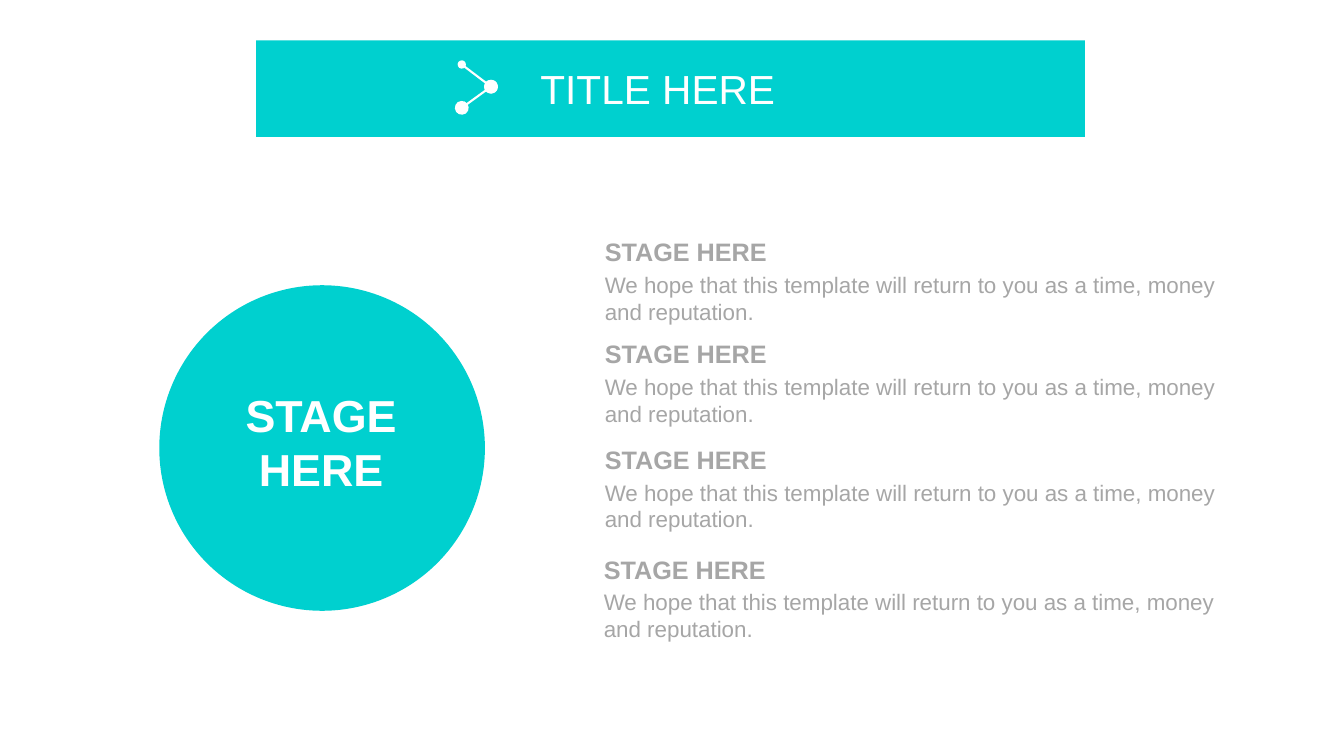
from lxml.etree import SubElement
from pptx import Presentation
from pptx.dml.color import RGBColor
from pptx.enum.shapes import MSO_CONNECTOR, MSO_SHAPE
from pptx.enum.text import MSO_ANCHOR, MSO_AUTO_SIZE, PP_ALIGN
from pptx.oxml.ns import qn
from pptx.util import Inches, Pt

TURQUOISE = RGBColor(0x00, 0xD0, 0xCF)
WHITE = RGBColor(0xFF, 0xFF, 0xFF)
GRAY = RGBColor(0xA6, 0xA6, 0xA6)
STAGES = [(5.9, 2.3), (5.9, 3.31), (5.9, 4.36), (5.89, 5.45)]
DESCRIPTION = "We hope that this template will return to you as a time, money and reputation."


def write_text(box, text, size, color, bold=False, align=PP_ALIGN.LEFT, wrap=True):
    """Fill a text shape with one formatted paragraph."""
    frame = box.text_frame
    frame.text = text
    frame.word_wrap = wrap
    frame.auto_size = MSO_AUTO_SIZE.NONE
    frame.vertical_anchor = MSO_ANCHOR.TOP
    frame.margin_left = frame.margin_right = Inches(0.1)
    frame.margin_top = frame.margin_bottom = Inches(0.05)
    para = frame.paragraphs[0]
    para.alignment = align
    para.font.name = "Arial"
    para.font.size = Pt(size)
    para.font.bold = bold
    para.font.color.rgb = color


def add_text(page, left, top, width, height, *args, **options):
    """Add a text box and write its paragraph."""
    box = page.shapes.add_textbox(Inches(left), Inches(top), Inches(width), Inches(height))
    write_text(box, *args, **options)


def add_solid(page, kind, left, top, width, height):
    """Add a turquoise shape without outline or shadow."""
    shape = page.shapes.add_shape(kind, Inches(left), Inches(top), Inches(width), Inches(height))
    shape.shadow.inherit = False
    shape.fill.solid()
    shape.fill.fore_color.rgb = TURQUOISE
    shape.line.fill.background()
    return shape


def add_dotted_line(page, start, end, head_size):
    """Join two points with a white line that ends in round dots."""
    points = [Inches(value) for value in start + end]
    line = page.shapes.add_connector(MSO_CONNECTOR.STRAIGHT, *points)
    line.line.color.rgb = WHITE
    line.line.width = Pt(1.5)
    outline = line.line._get_or_add_ln()
    for tag, size in (("a:headEnd", head_size), ("a:tailEnd", "lg")):
        SubElement(outline, qn(tag), type="oval", w=size, len=size)
    SubElement(line.element.spPr, qn("a:effectLst"))


def add_title_band(page, left, top, width, height):
    """Draw the band with its node icon and title."""
    band = add_solid(page, MSO_SHAPE.RECTANGLE, left, top, width, height)
    title = page.shapes.title
    band.element.addnext(title.element)
    title.left, title.top = Inches(left + 2.72), Inches(top + 0.18)
    title.width, title.height = Inches(2.55), Inches(0.59)
    write_text(title, "TITLE HERE", 29, WHITE, wrap=False)
    middle = (left + 2.33, top + 0.46)
    add_dotted_line(page, (left + 2.04, top + 0.24), middle, "med")
    add_dotted_line(page, middle, (left + 2.04, top + 0.67), "lg")


def add_stage_circle(page, left, top, diameter):
    """Draw the large circle and its label."""
    add_solid(page, MSO_SHAPE.OVAL, left, top, diameter, diameter)
    add_text(page, left + 0.6, top + 0.97, 2.01, 1.18, "STAGE HERE", 32, WHITE,
             bold=True, align=PP_ALIGN.CENTER)


def add_stage(page, left, top, width):
    """Place a stage heading above its description."""
    add_text(page, left, top, 1.82, 0.4, "STAGE HERE", 18, GRAY, bold=True, wrap=False)
    add_text(page, left, top + 0.34, width, 0.64, DESCRIPTION, 16, GRAY)


def main():
    """Build and save the slide."""
    deck = Presentation()
    deck.slide_width, deck.slide_height = Inches(13.33), Inches(7.5)
    page = deck.slides.add_slide(deck.slide_layouts.get_by_name("Title Only"))
    add_title_band(page, 2.54, 0.4, 8.22, 0.96)
    add_stage_circle(page, 1.58, 2.83, 3.23)
    for left, top in STAGES:
        add_stage(page, left, top, 6.3)
    deck.save("out.pptx")


if __name__ == "__main__":
    main()
